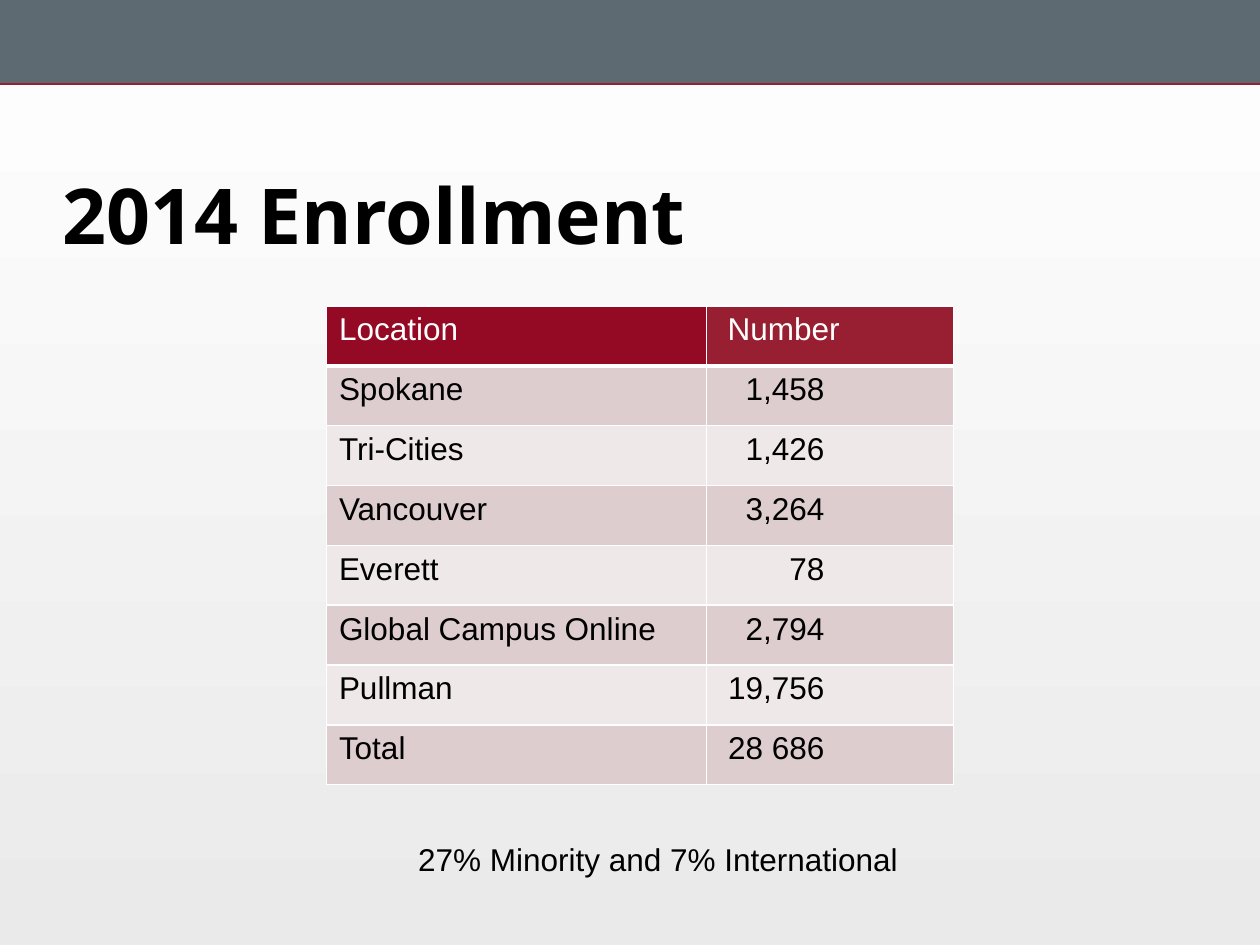
from lxml.etree import SubElement
from pptx import Presentation
from pptx.dml.color import RGBColor
from pptx.enum.shapes import MSO_CONNECTOR, MSO_SHAPE
from pptx.enum.text import MSO_ANCHOR, MSO_AUTO_SIZE, PP_ALIGN
from pptx.oxml.ns import qn
from pptx.util import Cm, Pt

WHITE = RGBColor(0xFF, 0xFF, 0xFF)
PALE_GREY = RGBColor(0xEA, 0xEA, 0xEA)
SLATE = RGBColor(0x5E, 0x6A, 0x71)
CRIMSON = RGBColor(0x98, 0x1E, 0x32)
DEEP_CRIMSON = RGBColor(0x94, 0x09, 0x24)
ROSE = RGBColor(0xDD, 0xCD, 0xCE)
PALE_ROSE = RGBColor(0xEF, 0xE8, 0xE8)
BLACK = RGBColor(0, 0, 0)

ENROLLMENT = [
    ("Location", "Number"),
    ("Spokane", "1,458"),
    ("Tri-Cities", "1,426"),
    ("Vancouver", "3,264"),
    ("Everett", "78"),
    ("Global Campus Online", "2,794"),
    ("Pullman", "19,756"),
    ("Total", "28 686"),
]


def write(frame, text, font="Arial", size=18, color=BLACK, bold=False,
          align=PP_ALIGN.LEFT, spacing=None):
    para = frame.paragraphs[0]
    para.alignment = align
    para.line_spacing = spacing
    span = para.add_run()
    span.text = text
    span.font.name = font
    span.font.size = Pt(size)
    span.font.bold = bold
    span.font.color.rgb = color


def paint_background(page):
    fill = page.background.fill
    fill.gradient()
    fill.gradient_angle = 270
    for stop, color in zip(fill.gradient_stops, (WHITE, PALE_GREY)):
        stop.color.rgb = color


def add_banner(page, left, top, width, height):
    band = page.shapes.add_shape(MSO_SHAPE.RECTANGLE, left, top, width, height)
    band.shadow.inherit = False
    band.fill.solid()
    band.fill.fore_color.rgb = SLATE
    band.line.fill.background()
    bottom = top + height
    rule = page.shapes.add_connector(MSO_CONNECTOR.STRAIGHT, left, bottom, left + width, bottom)
    rule.line.color.rgb = CRIMSON
    rule.line.width = Pt(1)
    SubElement(rule._element.spPr, qn("a:effectLst"))


def add_title(page, left, top, width, height):
    frame = page.shapes.add_textbox(left, top, width, height).text_frame
    frame.word_wrap = True
    frame.vertical_anchor = MSO_ANCHOR.BOTTOM
    frame.margin_left = frame.margin_right = Cm(1.27)
    write(frame, "2014 Enrollment", font="Open Sans", size=44, bold=True, spacing=0.9)


def add_borders(cell, bottom_width):
    properties = cell._tc.get_or_add_tcPr()
    for side, width in (("L", 1), ("R", 1), ("T", 1), ("B", bottom_width)):
        line = SubElement(properties, qn(f"a:ln{side}"), w=str(Pt(width)))
        fill = SubElement(line, qn("a:solidFill"))
        SubElement(fill, qn("a:srgbClr"), val=str(WHITE))


def add_enrollment_table(page, left, top, width, height):
    table = page.shapes.add_table(len(ENROLLMENT), 2, left, top, width, height).table
    table.columns[0].width = Cm(7.66)
    table.columns[1].width = width - Cm(7.66)
    for row, values in enumerate(ENROLLMENT):
        table.rows[row].height = height // len(ENROLLMENT)
        for column, text in enumerate(values):
            cell = table.cell(row, column)
            heading = row == 0
            add_borders(cell, 3 if heading else 1)
            cell.fill.solid()
            if heading:
                cell.fill.fore_color.rgb = (DEEP_CRIMSON, CRIMSON)[column]
            else:
                cell.fill.fore_color.rgb = ROSE if row % 2 else PALE_ROSE
            if column == 1:
                cell.margin_left = Cm(0.43)
                cell.margin_right = Cm(0.25 if heading else 2.6)
            write(cell.text_frame, text, color=WHITE if heading else BLACK,
                  align=PP_ALIGN.RIGHT if column and not heading else PP_ALIGN.LEFT)


def add_note(page, left, top, width, height):
    frame = page.shapes.add_textbox(left, top, width, height).text_frame
    frame.word_wrap = False
    frame.auto_size = MSO_AUTO_SIZE.SHAPE_TO_FIT_TEXT
    write(frame, "27% Minority and 7% International")


def main():
    deck = Presentation()
    deck.slide_width, deck.slide_height = Cm(25.4), Cm(19.05)
    page = deck.slides.add_slide(deck.slide_layouts[6])
    paint_background(page)
    add_banner(page, 0, 0, deck.slide_width, Cm(1.7))
    add_title(page, 0, Cm(3.4), deck.slide_width, Cm(1.98))
    add_enrollment_table(page, Cm(6.58), Cm(6.17), Cm(12.64), Cm(9.65))
    add_note(page, Cm(8.18), Cm(16.81), Cm(10.29), Cm(1.03))
    deck.save("out.pptx")


if __name__ == "__main__":
    main()
